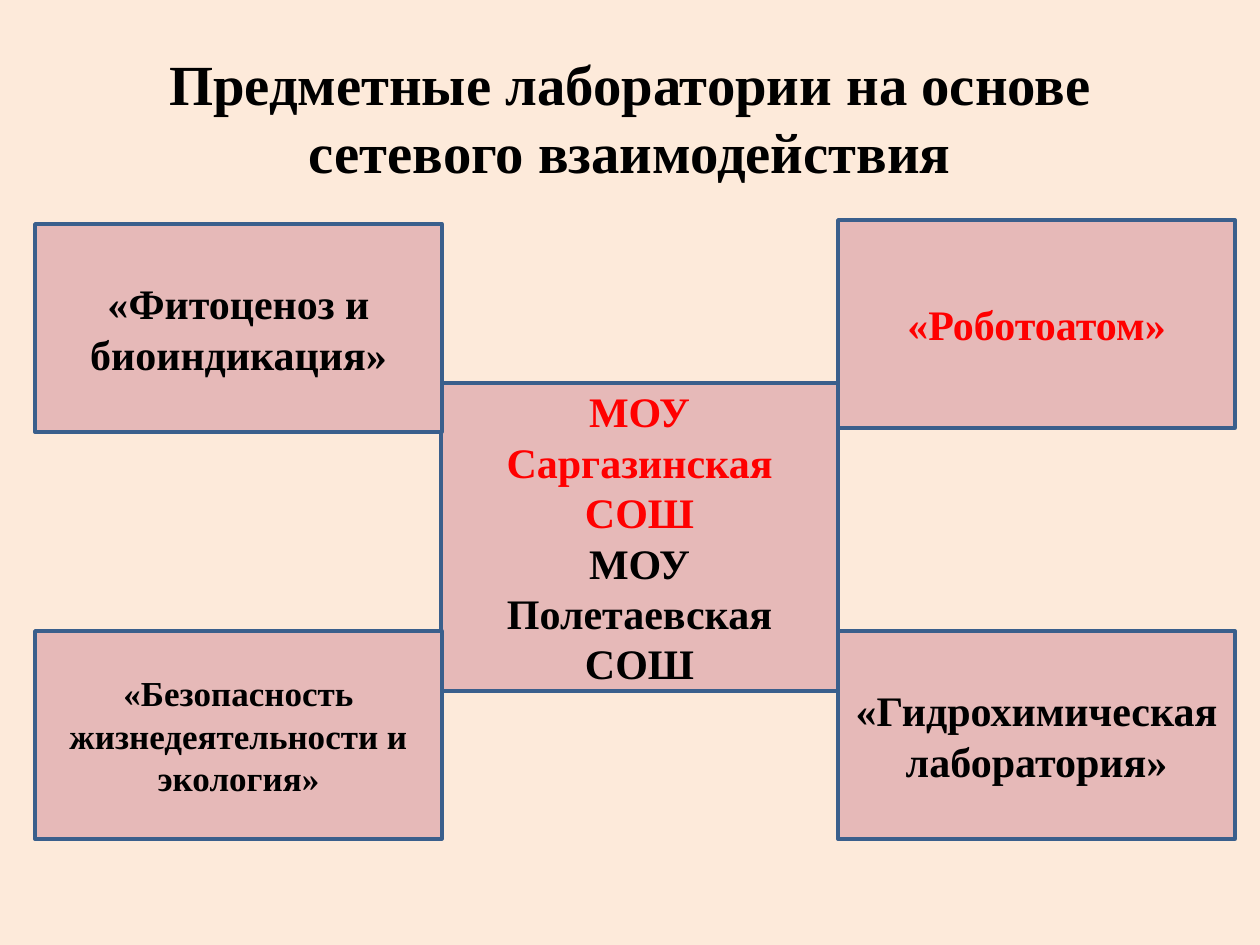
from pptx import Presentation
from pptx.dml.color import RGBColor
from pptx.enum.shapes import MSO_SHAPE
from pptx.enum.text import MSO_ANCHOR, PP_ALIGN
from pptx.util import Emu, Pt

PX = 914400 // 126
FONT = "Times New Roman"
CREAM = RGBColor(0xFD, 0xEA, 0xDA)
PINK = RGBColor(0xE6, 0xB9, 0xB8)
BLUE = RGBColor(0x3A, 0x5F, 0x8C)
RED = RGBColor(0xFF, 0x00, 0x00)
BLACK = RGBColor(0x00, 0x00, 0x00)

LEFT_X, LEFT_W = 35, 407
CENTER_X, RIGHT_X, BOX_W = 441, 838, 397
LAB_H, BOTTOM_Y = 208, 631

LABS = [
    (LEFT_X, 224, LEFT_W, "«Фитоценоз и биоиндикация»", 24, BLACK),
    (LEFT_X, BOTTOM_Y, LEFT_W, "«Безопасность жизнедеятельности и экология»", 20, BLACK),
    (RIGHT_X, 220, BOX_W, "«Роботоатом»", 24, RED),
    (RIGHT_X, BOTTOM_Y, BOX_W, "«Гидрохимическая лаборатория»", 24, BLACK),
]
SCHOOLS = [("МОУ Саргазинская СОШ", RED), ("МОУ Полетаевская СОШ", BLACK)]


def px(*lengths):
    return [Emu(length * PX) for length in lengths]


def write_centered(frame, lines, size):
    """Fill the frame with bold paragraphs given as (text, color) pairs."""
    frame.word_wrap = True
    frame.vertical_anchor = MSO_ANCHOR.MIDDLE
    for index, (text, color) in enumerate(lines):
        paragraph = frame.add_paragraph() if index else frame.paragraphs[0]
        paragraph.alignment = PP_ALIGN.CENTER
        run = paragraph.add_run()
        run.text = text
        run.font.name = FONT
        run.font.size = Pt(size)
        run.font.bold = True
        run.font.color.rgb = color


def add_title(slide, text):
    title = slide.shapes.add_textbox(*px(63, 38, 1134, 158))
    write_centered(title.text_frame, [(text, BLACK)], 32.4)


def add_box(slide, bounds, lines, size):
    box = slide.shapes.add_shape(MSO_SHAPE.RECTANGLE, *px(*bounds))
    box.shadow.inherit = False
    box.fill.solid()
    box.fill.fore_color.rgb = PINK
    box.line.color.rgb = BLUE
    box.line.width = Pt(2)
    write_centered(box.text_frame, lines, size)


def main():
    presentation = Presentation()
    presentation.slide_width, presentation.slide_height = px(1260, 945)
    slide = presentation.slides.add_slide(presentation.slide_layouts[6])
    slide.background.fill.solid()
    slide.background.fill.fore_color.rgb = CREAM

    add_title(slide, "Предметные лаборатории на основе сетевого взаимодействия")
    add_box(slide, (CENTER_X, 383, BOX_W, 308), SCHOOLS, 24)
    for left, top, width, name, size, color in LABS:
        add_box(slide, (left, top, width, LAB_H), [(name, color)], size)
    presentation.save("out.pptx")


if __name__ == "__main__":
    main()
